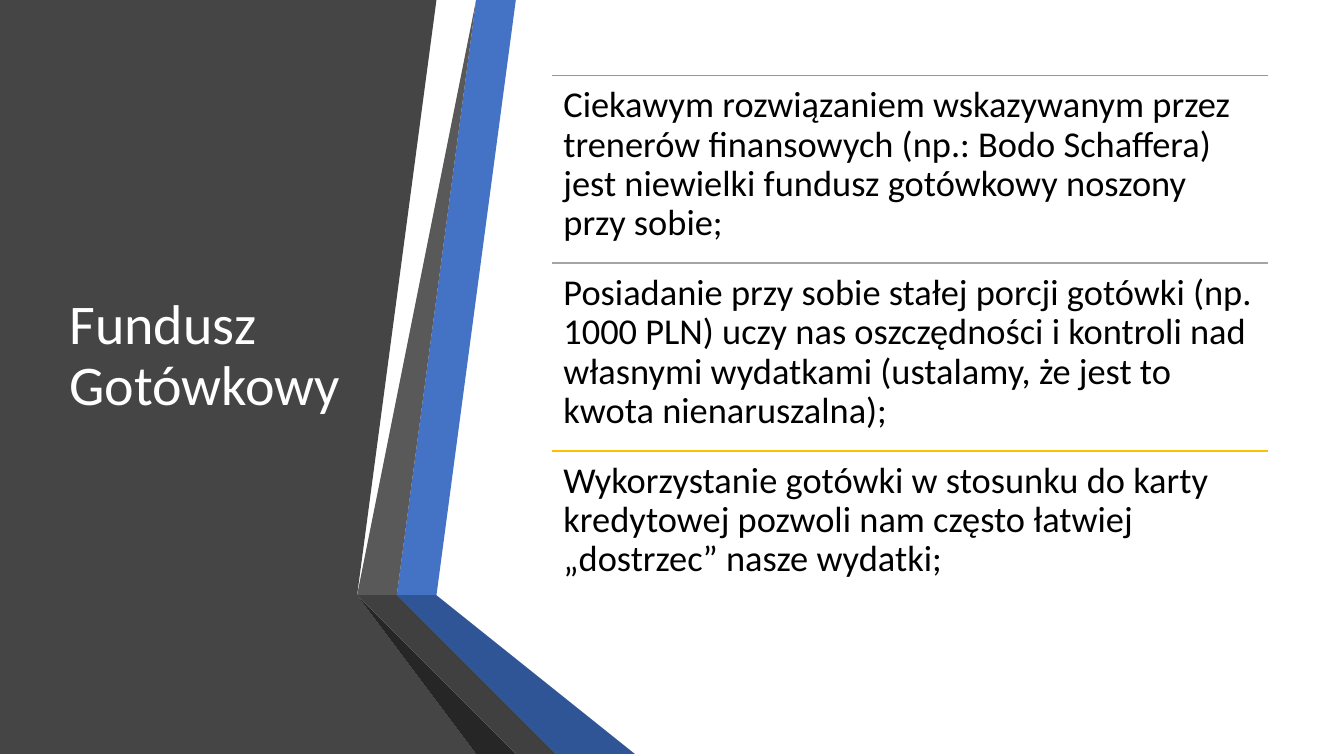
from pptx import Presentation, util as u
from pptx.dml.color import RGBColor
from pptx.enum import shapes, text
from pptx.oxml.ns import qn
from lxml import etree


def paint(form, tint):
    form.solid()
    form.fore_color.rgb = RGBColor.from_string(tint)


def write(words, box, look, frame):
    tf = slide.shapes.add_textbox(*[u.Cm(n) for n in box]).text_frame
    for key, val in frame.items():
        setattr(tf, key, val)
    par = tf.paragraphs[0]
    par.line_spacing = 0.9
    run = par.add_run()
    run.text = words
    run.font.name = "Calibri"
    run.font.size = u.Pt(look["size"])
    paint(run.font.fill, look["tint"])


deck = Presentation()
deck.slide_width, deck.slide_height = u.Cm(33.87), u.Cm(19.05)
slide = deck.slides.add_slide(deck.slide_layouts[6])

end = 19.05
bands = [
    ("454545", [(0, 0), (11.4, 0), (9.04, 14.6), (9.04, 14.63), (12.24, end), (0, end)]),
    ("4472C4", [(10.06, 14.68), (10.74, 14.81), (13.18, 0), (12.47, 0)]),
    ("595959", [(12.32, 0), (11.61, 0), (9.22, 14.55), (9.91, 14.66)]),
    ("262626", [(9.22, 14.55), (12.47, end), (12.62, end)]),
    ("203864", [(10.06, 14.71), (14.07, end), (14.22, end)]),
    ("2F5597", [(10.06, 14.71), (14.22, end), (15.98, end), (10.74, 14.81), (10.06, 14.68)]),
    ("404040", [(13.92, end), (10.03, 14.81), (9.88, 14.68), (9.91, 14.66), (9.22, 14.55), (12.62, end)]),
]
for tint, dots in bands:
    pen = slide.shapes.build_freeform(*dots[0], scale=u.Cm(1))
    pen.add_line_segments(dots[1:], close=True)
    band = pen.convert_to_shape()
    band.shadow.inherit = False
    band.line.fill.background()
    paint(band.fill, tint)

write("Fundusz Gotówkowy", (1.5, 1.9, 7.72, 14.18), {"size": 40, "tint": "FFFFFF"},
      {"word_wrap": True, "vertical_anchor": text.MSO_ANCHOR.MIDDLE})

points = [
    ("ED7D31", "Ciekawym rozwiązaniem wskazywanym przez trenerów finansowych (np.: Bodo Schaffera) jest niewielki fundusz gotówkowy noszony przy sobie;"),
    ("A5A5A5", "Posiadanie przy sobie stałej porcji gotówki (np. 1000 PLN) uczy nas oszczędności i kontroli nad własnymi wydatkami (ustalamy, że jest to kwota nienaruszalna);"),
    ("FFC000", "Wykorzystanie gotówki w stosunku do karty kredytowej pozwoli nam często łatwiej „dostrzec” nasze wydatki;"),
]
left, wide, high = 13.92, 18.03, 4.73
frame = {"word_wrap": True, "vertical_anchor": text.MSO_ANCHOR.TOP}
for side in ("left", "top", "right", "bottom"):
    frame["margin_" + side] = u.Cm(0.28)
for i, (tint, words) in enumerate(points):
    top = 1.9 + i * high
    rule = slide.shapes.add_connector(shapes.MSO_CONNECTOR.STRAIGHT, u.Cm(left), u.Cm(top),
                                      u.Cm(left + wide), u.Cm(top))
    etree.SubElement(rule.line._get_or_add_ln().getparent(), qn("a:effectLst"))
    rule.line.width = u.Pt(1)
    paint(rule.line.fill, tint)
    write(words, (left, top, wide, high), {"size": 26, "tint": "000000"}, frame)

deck.save("out.pptx")
